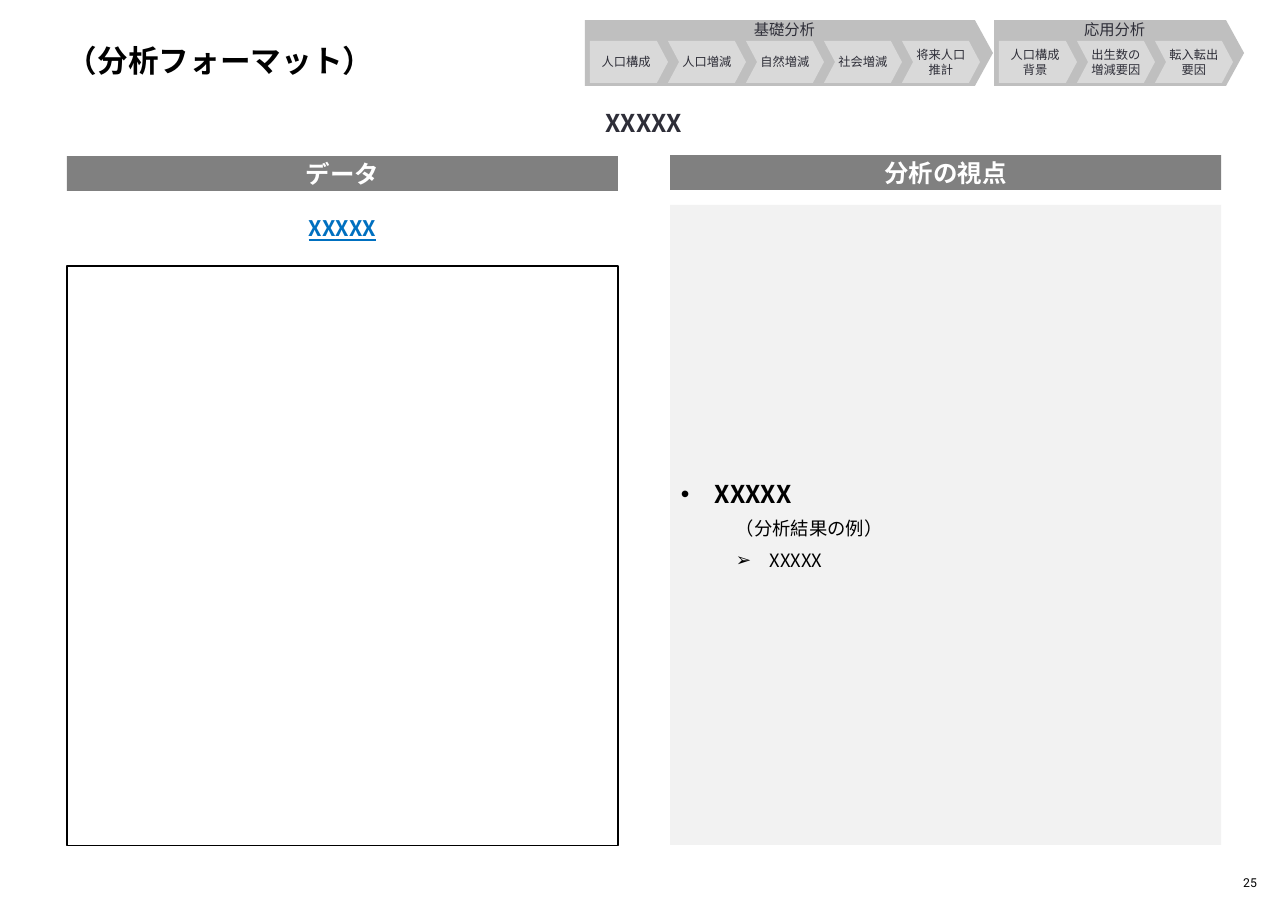
from lxml import etree
from pptx import Presentation
from pptx.dml.color import RGBColor
from pptx.enum.shapes import MSO_SHAPE as Shape
from pptx.enum.text import MSO_ANCHOR as Anchor, PP_ALIGN as Align
from pptx.oxml.ns import qn
from pptx.util import Pt

PX = 8298  # EMU per px
SLIDE_SIZE = (1288, 911)
FONT, NUMBER_FONT = "Noto Sans CJK JP", "Roboto"
BLACK = RGBColor(0x00, 0x00, 0x00)
WHITE = RGBColor(0xFF, 0xFF, 0xFF)
INK = RGBColor(0x2E, 0x2E, 0x38)
LINK_BLUE = RGBColor(0x00, 0x70, 0xC0)
HEADER_GRAY = RGBColor(0x80, 0x80, 0x80)
FLOW_GRAY = RGBColor(0xBF, 0xBF, 0xBF)
STEP_GRAY = RGBColor(0xD9, 0xD9, 0xD9)
PANEL_GRAY = RGBColor(0xF2, 0xF2, 0xF2)

TITLE = "（分析フォーマット）"
HEADING = "XXXXX"
DATA_LINK = "XXXXX"
PAGE_NUMBER = "25"
COLUMN_HEADERS = [("データ", 67, 156), ("分析の視点", 670, 155)]
# text, size, bold, level, left margin, hanging indent, bullet
VIEWPOINTS = [
    ("XXXXX", 16, True, 0, 34, -34, "•"),
    ("（分析結果の例）", 12, False, 1, 55, 0, None),
    ("XXXXX", 12, False, 1, 89, -34, "➢"),
]
# label, left, width, steps (one list of lines each)
FLOWS = [
    ("基礎分析", 585, 408,
     [["人口構成"], ["人口増減"], ["自然増減"], ["社会増減"], ["将来人口", "推計"]]),
    ("応用分析", 994, 250,
     [["人口構成", "背景"], ["出生数の", "増減要因"], ["転入転出", "要因"]]),
]
LEFT, RIGHT, COLUMN_W, FULL_W = 67, 670, 551, 1154
FLOW_TOP, FLOW_H = 20, 66
STEP_TOP, STEP_W, STEP_H, STEP_INSET = 41, 78, 42, 5


def emu(*lengths):
    return [length * PX for length in lengths]


def add_box(box, kind=Shape.RECTANGLE, fill=None, line=None, point=None):
    shape = slide.shapes.add_shape(kind, *emu(*box))
    shape.shadow.inherit = False
    if fill is None:
        shape.fill.background()
    else:
        shape.fill.solid()
        shape.fill.fore_color.rgb = fill
    if line is None:
        shape.line.fill.background()
    else:
        shape.line.color.rgb = line
        shape.line.width = Pt(0.75)
    if point is not None:
        shape.adjustments[0] = point
    return shape


def add_label(box):
    return slide.shapes.add_textbox(*emu(*box))


def set_frame(shape, anchor=Anchor.MIDDLE, inset=True):
    frame = shape.text_frame
    frame.word_wrap = True
    frame.vertical_anchor = anchor
    if not inset:
        frame.margin_left = frame.margin_right = 0
        frame.margin_top = frame.margin_bottom = 0
    return frame


def add_run(paragraph, text, size, color, bold=False, font=FONT):
    run = paragraph.add_run()
    run.text = text
    run.font.size = Pt(size)
    run.font.bold = bold
    run.font.name = font
    run.font.color.rgb = color
    east_asian = etree.SubElement(run.font._element, qn("a:ea"))
    east_asian.set("typeface", font)
    return run


def write(frame, lines, size, color, bold=False, align=Align.CENTER, font=FONT):
    """Fill the frame with one paragraph per line and return the last run."""
    for i, line in enumerate(lines):
        paragraph = frame.add_paragraph() if i else frame.paragraphs[0]
        paragraph.alignment = align
        run = add_run(paragraph, line, size, color, bold, font)
    return run


def set_indent(paragraph, margin, indent, bullet):
    props = paragraph._p.get_or_add_pPr()
    props.set("marL", str(margin * PX))
    props.set("indent", str(indent * PX))
    if bullet:
        etree.SubElement(props, qn("a:buFont")).set("typeface", "Arial")
        etree.SubElement(props, qn("a:buChar")).set("char", bullet)
    else:
        etree.SubElement(props, qn("a:buNone"))


def add_viewpoints():
    panel = add_box((RIGHT, 205, COLUMN_W, 640), fill=PANEL_GRAY)
    frame = set_frame(panel)
    for i, (text, size, bold, level, margin, indent, bullet) in enumerate(VIEWPOINTS):
        paragraph = frame.add_paragraph() if i else frame.paragraphs[0]
        paragraph.alignment = Align.LEFT
        paragraph.level = level
        paragraph.space_after = Pt(6)
        set_indent(paragraph, margin, indent, bullet)
        add_run(paragraph, text, size, BLACK, bold)


def add_flow(label, left, width, steps):
    arrow = add_box((left, FLOW_TOP, width, FLOW_H), Shape.PENTAGON, FLOW_GRAY, point=0.274)
    write(set_frame(arrow, Anchor.TOP, inset=False), [label], 10, INK)
    for i, lines in enumerate(steps):
        kind = Shape.CHEVRON if i else Shape.PENTAGON
        box = (left + STEP_INSET + i * STEP_W, STEP_TOP, STEP_W, STEP_H)
        step = add_box(box, kind, STEP_GRAY, point=0.265)
        write(set_frame(step, inset=False), lines, 8, INK)


prs = Presentation()
prs.slide_width, prs.slide_height = emu(*SLIDE_SIZE)
slide = prs.slides.add_slide(prs.slide_layouts[6])

page = set_frame(add_label((1210, 873, 47, 17)), Anchor.BOTTOM, inset=False)
write(page, [PAGE_NUMBER], 8, BLACK, align=Align.RIGHT, font=NUMBER_FONT)
add_viewpoints()
write(set_frame(add_label((LEFT, 100, FULL_W, 46))), [HEADING], 16, INK, True)
title = set_frame(add_label((LEFT, 39, FULL_W, 42)), inset=False)
write(title, [TITLE], 20, BLACK, True, Align.LEFT)
link = set_frame(add_label((LEFT, 207, COLUMN_W, 42)))
write(link, [DATA_LINK], 14, LINK_BLUE, True).font.underline = True
link.paragraphs[0].space_after = Pt(6)
for header, left, top in COLUMN_HEADERS:
    bar = add_box((left, top, COLUMN_W, 35), fill=HEADER_GRAY)
    write(set_frame(bar), [header], 16, WHITE, True)
add_box((LEFT, 266, COLUMN_W, 580), line=BLACK)
for flow in FLOWS:
    add_flow(*flow)

prs.save("out.pptx")
